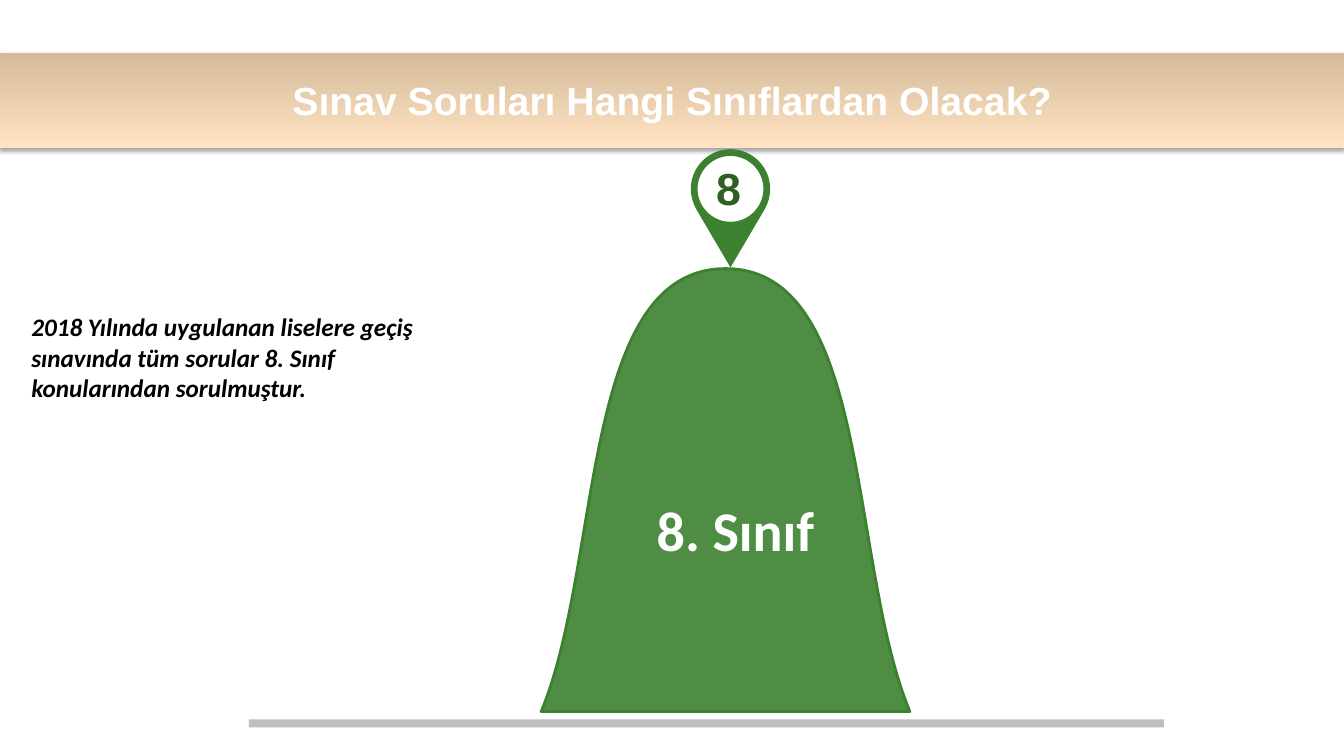
from dataclasses import dataclass

from lxml import etree
from pptx import Presentation
from pptx.dml.color import RGBColor
from pptx.enum import shapes as sh, text as tx
from pptx.oxml import parse_xml
from pptx.oxml.ns import nsdecls, qn
from pptx.util import Cm, Pt

HEADING = "Sınav Soruları Hangi Sınıflardan Olacak?"
# wording, box (left, top, width, height in cm), format
LABELS = [
    ("8", (17.8, 3.92, 1.09, 1.63),
     dict(size="pin", font="Arial", color="dark_green", wrap=False)),
    ("8. Sınıf", (16.3, 12.37, 5.16, 1.96),
     dict(size="grade", color="white")),
    ("2018 Yılında uygulanan liselere geçiş sınavında tüm sorular "
     "8. Sınıf konularından sorulmuştur.", (0.54, 7.73, 10.21, 2.57),
     dict(size="note", color="black", italic=True)),
]
SLIDE = (33.87, 19.05)
BANNER = (0, 1.33, 33.87, 2.39)
GROUND = (6.27, 18.13, 23.06, 0.2)
BELL = dict(left=13.64, right=22.93, top=6.77, bottom=17.93)
PIN = dict(x=18.41, y=4.76, radius=1.0, hole=0.83, tip=6.74)
ROUND = 0.55  # handle length of a quarter circle of radius 1


@dataclass(frozen=True)
class Theme:
    white: str = "FFFFFF"
    black: str = "000000"
    green: str = "3B812F"
    dark_green: str = "2C6123"
    ground: str = "BFBFBF"
    banner_top: str = "D5BB9A"
    banner_bottom: str = "FFE3C2"
    heading: int = 28
    pin: int = 32
    grade: int = 40
    note: int = 18


THEME = Theme()


def rgb(name):
    return RGBColor.from_string(getattr(THEME, name))


def write(frame, wording, *, size, color, font="Calibri", italic=False,
          wrap=True, align=tx.PP_ALIGN.LEFT):
    frame.word_wrap = wrap
    paragraph = frame.paragraphs[0]
    paragraph.alignment = align
    run = paragraph.add_run()
    run.text = wording
    run.font.name = font
    run.font.size = Pt(getattr(THEME, size))
    run.font.bold = True
    run.font.italic = italic
    run.font.color.rgb = rgb(color)


def paint(shape, color):
    shape.shadow.inherit = False
    shape.fill.solid()
    shape.fill.fore_color.rgb = rgb(color)
    shape.line.fill.background()


def add_curves(slide, *contours):
    """Each contour is a start point, then two handles and an end per curve."""
    rings = [[(Cm(x), Cm(y)) for x, y in contour] for contour in contours]
    builder = slide.shapes.build_freeform(*rings[0][0])
    builder.add_line_segments(rings[0][1:])
    for ring in rings[1:]:
        builder.move_to(*ring[0])
        builder.add_line_segments(ring[1:])
    shape = builder.convert_to_shape()
    steps = list(shape._element.iter(qn("a:lnTo")))
    for first, second, third in zip(steps[::3], steps[1::3], steps[2::3]):
        curve = etree.Element(qn("a:cubicBezTo"))
        first.addprevious(curve)
        for step in (first, second, third):
            curve.append(step[0])
            step.getparent().remove(step)
    return shape


def quarters(count):
    """Clockwise quarter circles of radius 1, from the left-hand point."""
    points = [(-1, 0)]
    quarter = [(-1, -ROUND), (-ROUND, -1), (0, -1)]
    for _ in range(count):
        points += quarter
        quarter = [(-y, x) for x, y in quarter]
    return points


def add_banner(slide):
    banner = slide.shapes.title
    banner.left, banner.top, banner.width, banner.height = map(Cm, BANNER)
    banner.fill.gradient()
    banner.fill.gradient_angle = 270
    for stop, color, position in zip(banner.fill.gradient_stops,
                                     ("banner_top", "banner_bottom"), (0, 1)):
        stop.color.rgb = rgb(color)
        stop.position = position
    banner._element.spPr.append(parse_xml(
        f'<a:effectLst {nsdecls("a")}><a:outerShdw blurRad="40000" dist="23000" '
        'dir="5400000" rotWithShape="0"><a:srgbClr val="000000">'
        '<a:alpha val="35000"/></a:srgbClr></a:outerShdw></a:effectLst>'))
    banner.text_frame.vertical_anchor = tx.MSO_ANCHOR.MIDDLE
    write(banner.text_frame, HEADING, size="heading", color="white",
          font="Arial", align=tx.PP_ALIGN.CENTER)


def add_bell(slide):
    left, right, top, bottom = (BELL[k] for k in ("left", "right", "top", "bottom"))
    middle = (left + right) / 2
    rise = [(left, bottom), (left + 1.55, bottom - 3.73),
            (left + 0.96, top), (middle, top)]
    fall = [(left + right - x, y) for x, y in reversed(rise[:-1])]
    bell = add_curves(slide, rise + fall)
    paint(bell, "green")
    bell.line.color.rgb = rgb("green")
    bell.line.width = Pt(2)
    solid = bell._element.spPr.find(qn("a:solidFill"))
    etree.SubElement(solid[0], qn("a:alpha")).set("val", "90000")


def add_pin(slide):
    x, y = PIN["x"], PIN["y"]
    tip = (0, (PIN["tip"] - y) / PIN["radius"])
    shoulder = [(1, 0.18), (0.95, 0.35), (0.87, 0.5)]
    far_shoulder = [(-a, b) for a, b in reversed(shoulder)]
    drop = (quarters(2) + shoulder + [shoulder[-1], tip, tip]
            + [tip] + [far_shoulder[0]] * 2 + far_shoulder[1:] + [(-1, 0)])
    hole = quarters(4)[::-1]
    paint(add_curves(slide, *([(x + a * r, y + b * r) for a, b in ring]
                              for ring, r in ((drop, PIN["radius"]),
                                              (hole, PIN["hole"])))), "green")


def main():
    deck = Presentation()
    deck.slide_width, deck.slide_height = map(Cm, SLIDE)
    slide = deck.slides.add_slide(deck.slide_layouts.get_by_name("Title Only"))
    add_banner(slide)
    ground = slide.shapes.add_shape(sh.MSO_SHAPE.RECTANGLE, *map(Cm, GROUND))
    paint(ground, "ground")
    add_bell(slide)
    add_pin(slide)
    for wording, box, style in LABELS:
        label = slide.shapes.add_textbox(*map(Cm, box))
        label.text_frame.auto_size = tx.MSO_AUTO_SIZE.SHAPE_TO_FIT_TEXT
        write(label.text_frame, wording, **style)
    deck.save("out.pptx")


if __name__ == "__main__":
    main()
